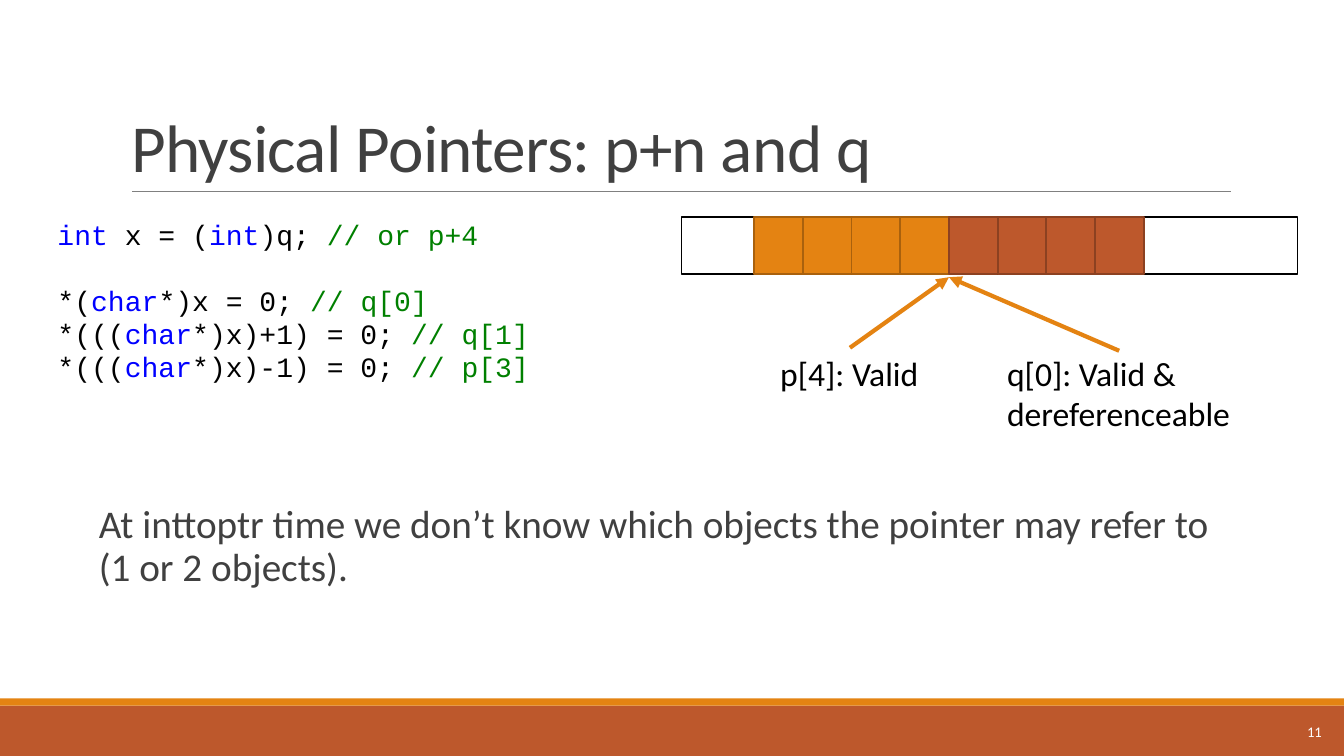
from lxml.etree import SubElement
from pptx import Presentation
from pptx.dml.color import RGBColor
from pptx.enum.shapes import MSO_CONNECTOR as Connector, MSO_SHAPE as Shape
from pptx.enum.text import MSO_ANCHOR as Anchor, MSO_AUTO_SIZE as AutoSize, PP_ALIGN as Align
from pptx.oxml.ns import qn
from pptx.util import Inches, Pt

COLORS = {
    "white": "FFFFFF", "black": "000000", "text": "404040", "rule": "808080",
    "orange": "E48312", "orange edge": "A9610D", "rust": "BD582C", "rust edge": "8C4121",
    "keyword": "0000FF", "comment": "008000",
}


def color(name):
    return RGBColor.from_string(COLORS[name])


def write(box, lines, size, fill="black", font="Calibri", align=Align.LEFT, anchor=Anchor.TOP,
          spacing=1.0, before=0, after=0, inset=0.1, hanging=False, wrap=True, tracking=None):
    """Fill a box; each line is a list of (text, colour) runs, or a string in the fill colour."""
    frame = box.text_frame
    frame.auto_size, frame.word_wrap = AutoSize.NONE, wrap
    frame.vertical_anchor = anchor
    frame.margin_left = frame.margin_right = Inches(inset)
    frame.margin_top = frame.margin_bottom = Inches(0.05)
    for index, line in enumerate(lines):
        para = frame.paragraphs[0] if index == 0 else frame.add_paragraph()
        para.alignment, para.line_spacing = align, spacing
        para.space_before, para.space_after = Pt(before), Pt(after)
        if hanging:
            properties = para._p.get_or_add_pPr()
            properties.set("marL", str(Inches(0.1)))
            properties.set("indent", str(-Inches(0.1)))
            SubElement(properties, qn("a:buFont"), typeface="Calibri")
            SubElement(properties, qn("a:buChar"), char=" ")
        for text, run_color in [(line, fill)] if isinstance(line, str) else line:
            span = para.add_run()
            span.text = text
            span.font.name, span.font.size = font, Pt(size)
            span.font.color.rgb = color(run_color)
            if tracking is not None:
                span._r.get_or_add_rPr().set("spc", str(tracking))


deck = Presentation()
deck.slide_width, deck.slide_height = Inches(13.33), Inches(7.5)
page = deck.slides.add_slide(deck.slide_layouts[5])
shapes = page.shapes

# Footer bands, then the memory strip: free space, four cells of p, four cells of q
STRIP_TOP, STRIP_HEIGHT, CELL = 2.15, 0.57, 0.483
P_LEFT = 7.48
Q_LEFT = P_LEFT + 4 * CELL
rectangles = [
    (0, 7, 13.33, 0.5, "rust", None),
    (0, 6.93, 13.33, 0.07, "orange", None),
    (6.76, STRIP_TOP, 6.11, STRIP_HEIGHT, "white", "black"),
]
for start, fill in ((P_LEFT, "orange"), (Q_LEFT, "rust")):
    for cell in range(4):
        rectangles.append((start + cell * CELL, STRIP_TOP, CELL, STRIP_HEIGHT, fill, f"{fill} edge"))

for left, top, width, height, fill, edge in rectangles:
    box = shapes.add_shape(Shape.RECTANGLE, Inches(left), Inches(top), Inches(width), Inches(height))
    box.shadow.inherit = False
    box.fill.solid()
    box.fill.fore_color.rgb = color(fill)
    if edge:
        box.line.color.rgb = color(edge)
        box.line.width = Pt(1.25)
    else:
        box.line.fill.background()

# Title rule and the two pointer arrows, which meet between p and q
for x1, y1, x2, y2, stroke, width, arrow in (
    (1.31, 1.9, 12.21, 1.9, "rule", 0.5, False),
    (11.1, 3.48, Q_LEFT, 2.75, "orange", 3, True),
    (8.43, 3.45, Q_LEFT, 2.75, "orange", 3, True),
):
    line = shapes.add_connector(Connector.STRAIGHT, Inches(x1), Inches(y1), Inches(x2), Inches(y2))
    line.line.color.rgb = color(stroke)
    line.line.width = Pt(width)
    if arrow:
        SubElement(line.line._get_or_add_ln(), qn("a:tailEnd"), type="triangle")
    SubElement(line._element.spPr, qn("a:effectLst"))

title = shapes.title
title.left, title.top, title.width, title.height = Inches(1.2), Inches(0.31), Inches(11), Inches(1.59)
write(title, ["Physical Pointers: p+n and q"], 48, "text", anchor=Anchor.BOTTOM,
      spacing=0.85, tracking=-50)

code = shapes.add_textbox(Inches(0.47), Inches(2.15), Inches(4.88), Inches(2))
code_lines = [[("int", "keyword"), (" x = (", "black"), ("int", "keyword"), (")q; ", "black"),
               ("// or p+4", "comment")]]
for opening, store, comment in (
    ("*(", "*)x = 0; ", "// q[0]"),
    ("*(((", "*)x)+1) = 0; ", "// q[1]"),
    ("*(((", "*)x)-1) = 0; ", "// p[3]"),
):
    code_lines.append([(opening, "black"), ("char", "keyword"), (store, "black"), (comment, "comment")])
write(code, code_lines, 20, font="Courier New", spacing=0.9, after=2, inset=0, hanging=True)
code.text_frame.paragraphs[1].space_before = Pt(23.5)

remark = shapes.add_textbox(Inches(0.88), Inches(4.96), Inches(11.27), Inches(1.32))
write(remark, ["At inttoptr time we don’t know which objects the pointer may refer to (1 or 2 objects)."],
      28, "text", spacing=0.9, before=12, after=2, inset=0, hanging=True)

q_label = shapes.add_textbox(Inches(9.89), Inches(3.45), Inches(2.42), Inches(0.91))
write(q_label, ["q[0]: Valid & dereferenceable"], 24)

p_label = shapes.add_textbox(Inches(7.64), Inches(3.45), Inches(1.59), Inches(0.5))
write(p_label, ["p[4]: Valid"], 24, wrap=False)

number = shapes.add_textbox(Inches(11.78), Inches(7.06), Inches(1.43), Inches(0.4))
write(number, ["11"], 10.5, "white", align=Align.RIGHT, anchor=Anchor.MIDDLE)

deck.save("out.pptx")
